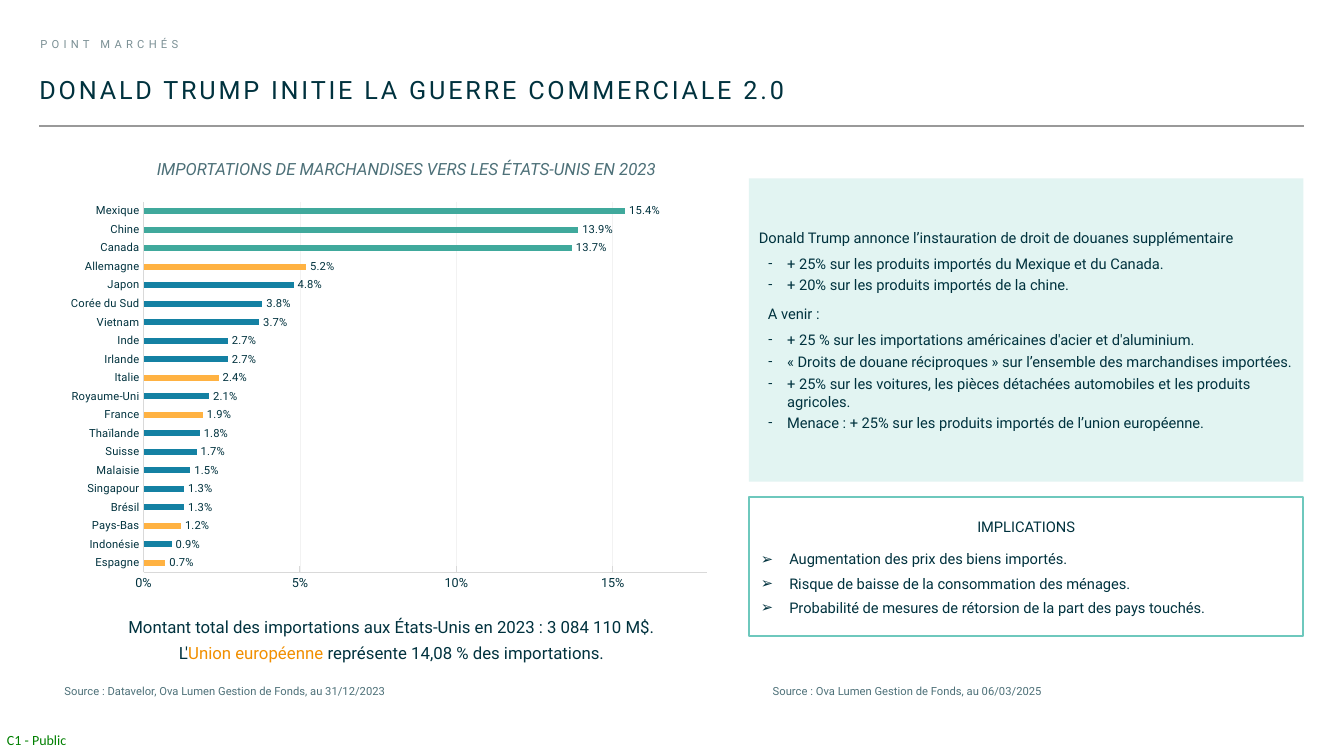
from dataclasses import dataclass, field
from typing import Optional

from lxml import etree
from pptx import Presentation
from pptx.chart.data import CategoryChartData
from pptx.dml.color import RGBColor
from pptx.enum.chart import XL_CHART_TYPE as CT, XL_LABEL_POSITION as LP, XL_TICK_MARK as TM
from pptx.enum.shapes import MSO_CONNECTOR as MC, MSO_SHAPE as MS
from pptx.enum.text import MSO_ANCHOR as MA, PP_ALIGN as PA
from pptx.oxml.ns import qn
from pptx.util import Pt

INK = RGBColor(0x00, 0x32, 0x3E)
MUTED = RGBColor(0x4D, 0x70, 0x78)
KICKER = RGBColor(0x7B, 0x90, 0x95)
GREEN = RGBColor(0x00, 0x80, 0x00)
WHITE = RGBColor(0xFF, 0xFF, 0xFF)
MINT = RGBColor(0xE2, 0xF4, 0xF2)
TEAL_EDGE = RGBColor(0x6E, 0xC8, 0xBD)
RULE = RGBColor(0x99, 0x99, 0x99)
EU_TEXT = RGBColor(0xF1, 0x8F, 0x00)
BLUE = RGBColor(0x14, 0x81, 0xA3)
ORANGE = RGBColor(0xFF, 0xB2, 0x42)
TEAL = RGBColor(0x40, 0xA9, 0x9C)
AXIS = RGBColor(0xD9, 0xD9, 0xD9)
GRID = RGBColor(0xF2, 0xF2, 0xF2)


@dataclass
class Para:
    runs: list[tuple[str, RGBColor]]
    format: dict = field(default_factory=dict)
    bullet: str = ""
    left: float = 0
    hanging: float = 0


@dataclass
class Box:
    at: tuple[float, float, float, float]
    paras: list[Para]
    size: float
    font: str = "Roboto"
    italic: bool = False
    tracking: float = 0
    anchor: MA = MA.MIDDLE
    insets: tuple[float, float, float, float] = (0, 0, 0, 0)
    fill: Optional[RGBColor] = None
    line: Optional[RGBColor] = None


def set_all(target, values: dict) -> None:
    for name, value in values.items():
        setattr(target, name, value)


def text(words: str, color: RGBColor = INK, **values) -> Para:
    return Para([(words, color)], values)


def dash(words: str, after: float = 3) -> Para:
    return Para([(words, INK)], {"space_after": Pt(after)}, "‐", 20.2, 13.5)


def arrow(words: str) -> Para:
    return Para([(words, INK)], {"space_after": Pt(6), "line_spacing": 0.9}, "➢", 20.2, 20.2)


def draw_para(p, para: Para, box: Box) -> None:
    pPr = p._p.get_or_add_pPr()
    if para.left:
        pPr.set("marL", str(Pt(para.left)))
        pPr.set("indent", str(-Pt(para.hanging)))
    if para.bullet:
        etree.SubElement(pPr, qn("a:buFont"), typeface=box.font)
        etree.SubElement(pPr, qn("a:buChar"), char=para.bullet)
    set_all(p, para.format)
    for words, color in para.runs:
        r = p.add_run()
        r.text = words
        set_all(r.font, {"name": box.font, "size": Pt(box.size), "italic": box.italic})
        r.font.color.rgb = color
        if box.tracking:
            r._r.get_or_add_rPr().set("spc", str(int(box.tracking * 100)))


def draw_box(s, box: Box) -> None:
    place = [Pt(v) for v in box.at]
    if box.fill is None:
        sp = s.shapes.add_textbox(*place)
    else:
        sp = s.shapes.add_shape(MS.RECTANGLE, *place)
        sp.shadow.inherit = False
        sp.fill.solid()
        sp.fill.fore_color.rgb = box.fill
        if box.line is None:
            sp.line.fill.background()
        else:
            sp.line.color.rgb = box.line
            sp.line.width = Pt(1.5)
    tf = sp.text_frame
    sides = ("margin_left", "margin_top", "margin_right", "margin_bottom")
    set_all(tf, {"word_wrap": True, "vertical_anchor": box.anchor,
                 **{side: Pt(v) for side, v in zip(sides, box.insets)}})
    for i, para in enumerate(box.paras):
        p = tf.add_paragraph() if i else tf.paragraphs[0]
        p.alignment = PA.LEFT
        draw_para(p, para, box)


def style_font(font, size: float) -> None:
    set_all(font, {"name": "Roboto", "size": Pt(size)})
    font.color.rgb = INK


def style_line(line, color: RGBColor, width: float) -> None:
    line.color.rgb = color
    line.width = Pt(width)


def draw_chart(s, imports: dict[str, float], highlights: dict[str, RGBColor]) -> None:
    data = CategoryChartData()
    data.categories = list(imports)
    data.add_series("Importations", list(imports.values()))
    chart = s.shapes.add_chart(CT.BAR_CLUSTERED, Pt(25.2), Pt(134), Pt(499), Pt(295.2), data).chart
    set_all(chart, {"has_legend": False, "has_title": False})
    style_font(chart.font, 9)

    # Bars and their labels
    plot = chart.plots[0]
    set_all(plot, {"gap_width": 203, "vary_by_categories": False, "has_data_labels": True})
    set_all(plot.data_labels, {"show_value": True, "position": LP.OUTSIDE_END,
                               "number_format": "0.0%", "number_format_is_linked": False})
    style_font(plot.data_labels.font, 8)
    series = plot.series[0]
    series.format.fill.solid()
    series.format.fill.fore_color.rgb = BLUE
    for i, country in enumerate(imports):
        if country in highlights:
            fill = series.points[i].format.fill
            fill.solid()
            fill.fore_color.rgb = highlights[country]

    # Axes
    for axis, size, tick in ((chart.category_axis, 8, TM.NONE), (chart.value_axis, 9, TM.INSIDE)):
        set_all(axis, {"major_tick_mark": tick, "minor_tick_mark": TM.NONE})
        style_font(axis.tick_labels.font, size)
        style_line(axis.format.line, AXIS, 0.75)
    chart.category_axis.has_major_gridlines = False
    values = chart.value_axis
    set_all(values, {"minimum_scale": 0, "maximum_scale": 0.18, "major_unit": 0.05,
                     "has_major_gridlines": True})
    set_all(values.tick_labels, {"number_format": "0%", "number_format_is_linked": False})
    style_line(values.major_gridlines.format.line, GRID, 0.5)

    # Inner plot area
    area = chart._chartSpace.find(".//" + qn("c:plotArea"))
    for old in area.findall(qn("c:layout")):
        area.remove(old)
    layout = etree.Element(qn("c:layout"))
    manual = etree.SubElement(layout, qn("c:manualLayout"))
    for tag, val in (("layoutTarget", "inner"), ("xMode", "edge"), ("yMode", "edge"),
                     ("x", "0.155"), ("y", "0.035"), ("w", "0.806"), ("h", "0.896")):
        etree.SubElement(manual, qn("c:" + tag), val=val)
    area.insert(0, layout)


IMPORTS = {
    "Espagne": 0.007, "Indonésie": 0.009, "Pays-Bas": 0.012, "Brésil": 0.013,
    "Singapour": 0.013, "Malaisie": 0.015, "Suisse": 0.017, "Thaïlande": 0.018,
    "France": 0.019, "Royaume-Uni": 0.021, "Italie": 0.024, "Irlande": 0.027,
    "Inde": 0.027, "Vietnam": 0.037, "Corée du Sud": 0.038, "Japon": 0.048,
    "Allemagne": 0.052, "Canada": 0.137, "Chine": 0.139, "Mexique": 0.154,
}
HIGHLIGHTS = {
    **dict.fromkeys(("Espagne", "Pays-Bas", "France", "Italie", "Allemagne"), ORANGE),
    **dict.fromkeys(("Canada", "Chine", "Mexique"), TEAL),
}
PADDING = (7.2, 3.6, 7.2, 3.6)
CENTRED = {"alignment": PA.CENTER, "line_spacing": 0.9}

HEADINGS = [
    Box((5, 522.7, 60, 12.2), [text("C1 - Public", GREEN)], 10, "Calibri", anchor=MA.TOP),
    Box((28.1, 54.7, 903.6, 21.6),
        [text("DONALD TRUMP INITIE LA GUERRE COMMERCIALE 2.0", line_spacing=0.9)], 18, tracking=2),
    Box((28.8, 26.6, 841, 8.6), [text("POINT MARCHÉS", KICKER)], 8, tracking=3, anchor=MA.TOP),
    Box((46.1, 105.1, 488.9, 33.1),
        [text("IMPORTATIONS DE MARCHANDISES VERS LES ÉTATS-UNIS EN 2023", MUTED, **CENTRED)],
        12, italic=True, insets=PADDING, fill=WHITE),
]
PANELS = [
    Box((535, 127.4, 396, 216.7), [
        text("Donald Trump annonce l’instauration de droit de douanes supplémentaire",
             space_after=Pt(6)),
        dash("+ 25% sur les produits importés du Mexique et du Canada."),
        dash("+ 20% sur les produits importés de la chine.", 8),
        Para([("A venir :", INK)], {"space_after": Pt(6)}, left=6.5),
        dash("+ 25 % sur les importations américaines d'acier et d'aluminium."),
        dash("« Droits de douane réciproques » sur l’ensemble des marchandises importées."),
        dash("+ 25% sur les voitures, les pièces détachées automobiles et les produits agricoles."),
        dash("Menace : + 25% sur les produits importés de l’union européenne."),
    ], 10.5, insets=PADDING, fill=MINT),
    Box((535, 355, 396, 99.4), [
        text("IMPLICATIONS", space_after=Pt(12), **CENTRED),
        arrow("Augmentation des prix des biens importés."),
        arrow("Risque de baisse de la consommation des ménages."),
        arrow("Probabilité de mesures de rétorsion de la part des pays touchés."),
    ], 10.5, insets=(8.6, 5.8, 8.6, 3.6), fill=WHITE, line=TEAL_EDGE),
    Box((35.3, 432.7, 488.9, 50.4), [
        text("Montant total des importations aux États-Unis en 2023 : 3 084 110 M$.", **CENTRED),
        Para([("L'", INK), ("Union européenne ", EU_TEXT),
              ("représente 14,08 % des importations.", INK)], {**CENTRED, "space_before": Pt(6)}),
    ], 12, insets=PADDING, fill=WHITE),
]
SOURCES = [
    Box((left, 489, 309.6, 9.4), [text(words, MUTED)], 8, anchor=MA.TOP)
    for left, words in (
        (46.1, "Source : Datavelor, Ova Lumen Gestion de Fonds, au 31/12/2023"),
        (552, "Source : Ova Lumen Gestion de Fonds, au 06/03/2025"))
]


def main() -> None:
    prs = Presentation()
    set_all(prs, {"slide_width": Pt(960), "slide_height": Pt(540)})
    s = prs.slides.add_slide(prs.slide_layouts[6])
    # Rule under the title
    rule = s.shapes.add_connector(MC.STRAIGHT, Pt(28.1), Pt(90), Pt(931.7), Pt(90))
    style_line(rule.line, RULE, 1)
    etree.SubElement(rule._element.spPr, qn("a:effectLst"))
    # Text and chart
    for box in HEADINGS:
        draw_box(s, box)
    draw_chart(s, IMPORTS, HIGHLIGHTS)
    for box in PANELS + SOURCES:
        draw_box(s, box)
    prs.save("out.pptx")


if __name__ == "__main__":
    main()
